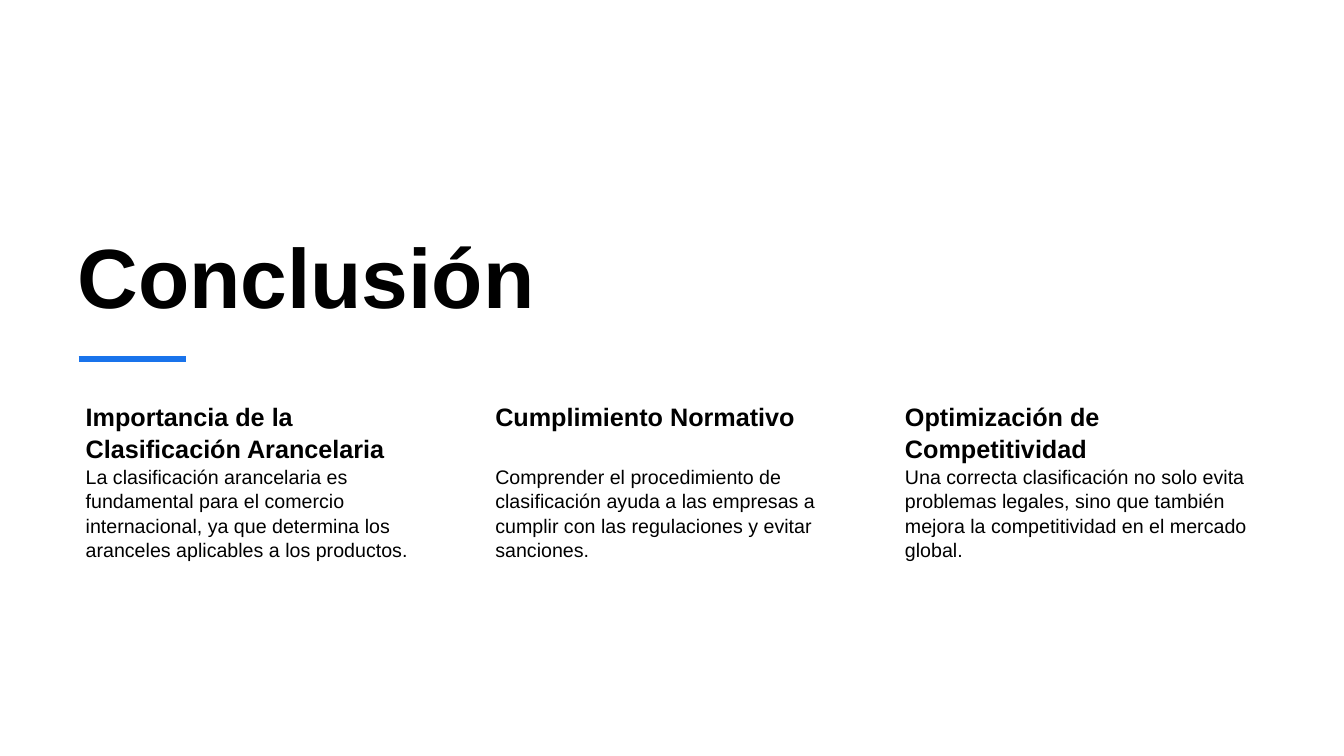
from dataclasses import dataclass

from lxml.etree import SubElement
from pptx import Presentation
from pptx.dml.color import RGBColor
from pptx.enum.shapes import MSO_CONNECTOR
from pptx.enum.text import MSO_ANCHOR
from pptx.oxml.ns import qn
from pptx.slide import Slide
from pptx.util import Pt

BLACK = RGBColor(0x00, 0x00, 0x00)
BLUE = RGBColor(0x19, 0x73, 0xEB)
WHITE = RGBColor(0xFF, 0xFF, 0xFF)

LEFT, STEP, WIDTH = 50.4, 292.6, 265.7


@dataclass(frozen=True)
class Style:
    size: float
    bold: bool
    pad: tuple[float, float, float, float]
    lead: float = 1.0
    after: float = 0
    anchor: MSO_ANCHOR = MSO_ANCHOR.TOP


@dataclass(frozen=True)
class Point:
    head: str
    body: str


TITLE = Style(60, True, (5, 2.5, 5, 2.5), anchor=MSO_ANCHOR.BOTTOM)
HEAD = Style(18, True, (10.8, 2.2, 2.2, 2.2), 1.07, 6.3)
BODY = Style(14, False, (10.8, 1.4, 1.4, 1.4), 1.04, 4.9)

POINTS = [
    Point(
        "Importancia de la Clasificación Arancelaria",
        "La clasificación arancelaria es fundamental para el comercio "
        "internacional, ya que determina los aranceles aplicables a los "
        "productos.",
    ),
    Point(
        "Cumplimiento Normativo",
        "Comprender el procedimiento de clasificación ayuda a las empresas a "
        "cumplir con las regulaciones y evitar sanciones.",
    ),
    Point(
        "Optimización de Competitividad",
        "Una correcta clasificación no solo evita problemas legales, sino que "
        "también mejora la competitividad en el mercado global.",
    ),
]


def apply(target: object, values: dict[str, object]) -> None:
    """Set each named attribute of the target."""
    for name, value in values.items():
        setattr(target, name, value)


def add_text(slide: Slide, text: str, style: Style,
             x: float, y: float, w: float, h: float) -> None:
    frame = slide.shapes.add_textbox(Pt(x), Pt(y), Pt(w), Pt(h)).text_frame
    left, top, right, bottom = map(Pt, style.pad)
    apply(frame, {
        "word_wrap": True, "vertical_anchor": style.anchor,
        "margin_left": left, "margin_top": top,
        "margin_right": right, "margin_bottom": bottom,
    })
    para = frame.paragraphs[0]
    apply(para, {"line_spacing": style.lead, "space_after": Pt(style.after)})
    run = para.add_run()
    run.text = text
    apply(run.font, {"name": "Arial", "size": Pt(style.size), "bold": style.bold})
    run.font.color.rgb = BLACK


def add_rule(slide: Slide, x: float, y: float, w: float) -> None:
    rule = slide.shapes.add_connector(
        MSO_CONNECTOR.STRAIGHT, Pt(x), Pt(y), Pt(x + w), Pt(y))
    rule.line.color.rgb = BLUE
    rule.line.width = Pt(4.5)
    SubElement(rule._element.spPr, qn("a:effectLst"))


def main() -> None:
    deck = Presentation()
    apply(deck, {"slide_width": Pt(960), "slide_height": Pt(540)})
    slide = deck.slides.add_slide(deck.slide_layouts[6])
    fill = slide.background.fill
    fill.solid()
    fill.fore_color.rgb = WHITE

    add_text(slide, "Conclusión", TITLE, LEFT, 123.8, 643, 110.9)
    for col, point in enumerate(POINTS):
        x = LEFT + col * STEP
        add_text(slide, point.head, HEAD, x, 283, WIDTH, 46.8)
        add_text(slide, point.body, BODY, x, 329.8, WIDTH, 149)
    add_rule(slide, 56.2, 256.3, 77)

    deck.save("out.pptx")


if __name__ == "__main__":
    main()
